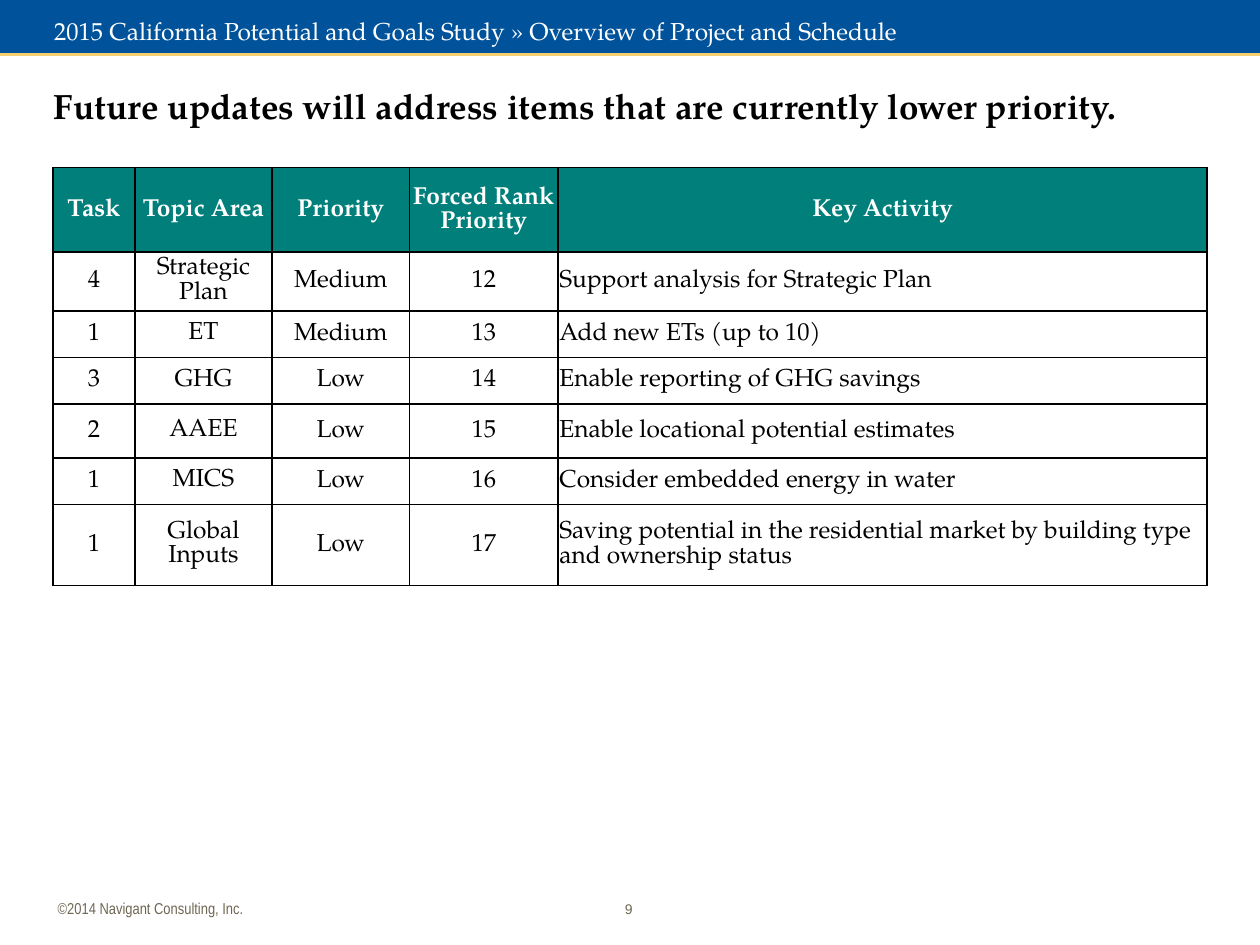
from lxml import etree
from pptx import Presentation
from pptx.dml.color import RGBColor
from pptx.enum import shapes, text
from pptx.oxml import parse_xml
from pptx.oxml.ns import nsdecls, qn
from pptx.util import Inches, Pt

SERIF = "TeX Gyre Pagella"
LEFT, CENTER = text.PP_ALIGN.LEFT, text.PP_ALIGN.CENTER
TOP, MIDDLE = text.MSO_ANCHOR.TOP, text.MSO_ANCHOR.MIDDLE


def rgb(color):
    return RGBColor.from_string(color)


def write(tf, words, size, color, name=SERIF, bold=False, align=LEFT, anchor=TOP):
    tf.word_wrap = True
    tf.vertical_anchor = anchor
    p = tf.paragraphs[0]
    p.alignment = align
    r = p.add_run()
    r.text = words
    for key, value in dict(size=Pt(size), name=name, bold=bold).items():
        setattr(r.font, key, value)
    r.font.color.rgb = rgb(color)


prs = Presentation()
prs.slide_width, prs.slide_height = Inches(10), Inches(7.5)
s = prs.slides.add_slide(prs.slide_layouts[5])

rule = s.shapes.add_connector(shapes.MSO_CONNECTOR.STRAIGHT,
                              Inches(0), Inches(0.42), Inches(10), Inches(0.42))
rule.line.color.rgb = rgb("F5D070")
rule.line.width = Pt(3)
etree.SubElement(rule._element.spPr, qn("a:effectLst"))

banner = s.shapes.add_shape(shapes.MSO_SHAPE.RECTANGLE, 0, 0, Inches(10), Inches(0.42))
banner.shadow.inherit = False
banner.fill.solid()
banner.fill.fore_color.rgb = rgb("00539B")
banner.line.fill.background()

title = s.shapes.title
title.left, title.top, title.width, title.height = map(Inches, (0.33, 0.08, 9.3, 0.25))
s.shapes._spTree.append(title._element)
title.text_frame.auto_size = text.MSO_AUTO_SIZE.NONE
write(title.text_frame, "2015 California Potential and Goals Study » Overview of Project and Schedule",
      14, "FFFFFF")

labels = [
    ((0.33, 0.5, 9.3, 0.67), "Future updates will address items that are currently lower priority.",
     dict(size=20, color="000000", bold=True, anchor=MIDDLE)),
    ((0.36, 7.08, 3.81, 0.25), "©2014 Navigant Consulting, Inc.",
     dict(size=9, color="6F6754", name="Arial Narrow")),
    ((4.74, 7.08, 0.5, 0.33), "9",
     dict(size=8, color="6F6754", name="Arial", align=CENTER)),
]
for box, words, style in labels:
    sp = s.shapes.add_textbox(*map(Inches, box))
    write(sp.text_frame, words, **style)
sp.text_frame.margin_top = sp.text_frame.margin_bottom = Inches(0.1)

rows = [
    ("Task", "Topic Area", "Priority", "Forced Rank Priority", "Key Activity"),
    ("4", "Strategic Plan", "Medium", "12", "Support analysis for Strategic Plan"),
    ("1", "ET", "Medium", "13", "Add new ETs (up to 10)"),
    ("3", "GHG", "Low", "14", "Enable reporting of GHG savings"),
    ("2", "AAEE", "Low", "15", "Enable locational potential estimates"),
    ("1", "MICS", "Low", "16", "Consider embedded energy in water"),
    ("1", "Global Inputs", "Low", "17",
     "Saving potential in the residential market by building type and ownership status"),
]
widths = [0.65, 1.09, 1.09, 1.18, 5.15]
heights = [0.67, 0.37, 0.37, 0.37, 0.43, 0.37, 0.64]
table = s.shapes.add_table(len(rows), len(widths), Inches(0.42), Inches(1.33),
                           Inches(sum(widths)), Inches(sum(heights))).table
for column, width in zip(table.columns, widths):
    column.width = Inches(width)
for row, height in zip(table.rows, heights):
    row.height = Inches(height)

for i, row in enumerate(rows):
    for j, words in enumerate(row):
        cell = table.cell(i, j)
        header = i == 0
        inset = Inches(0 if j == 1 and not header else 0.01)
        for side in ("left", "right", "top"):
            setattr(cell, f"margin_{side}", inset)
        cell.margin_bottom = 0
        write(cell.text_frame, words, 14, "FFFFFF" if header else "000000", bold=header,
              align=CENTER if header or j < 4 else LEFT)
        cell.vertical_anchor = MIDDLE
        tcPr = cell._tc.get_or_add_tcPr()
        for edge in ("lnL", "lnR", "lnT", "lnB"):
            tcPr.append(parse_xml(
                f'<a:{edge} {nsdecls("a")} w="12700"><a:solidFill>'
                f'<a:srgbClr val="000000"/></a:solidFill></a:{edge}>'))
        if header:
            cell.fill.solid()
            cell.fill.fore_color.rgb = rgb("007F7B")
        else:
            cell.fill.background()

prs.save("out.pptx")
